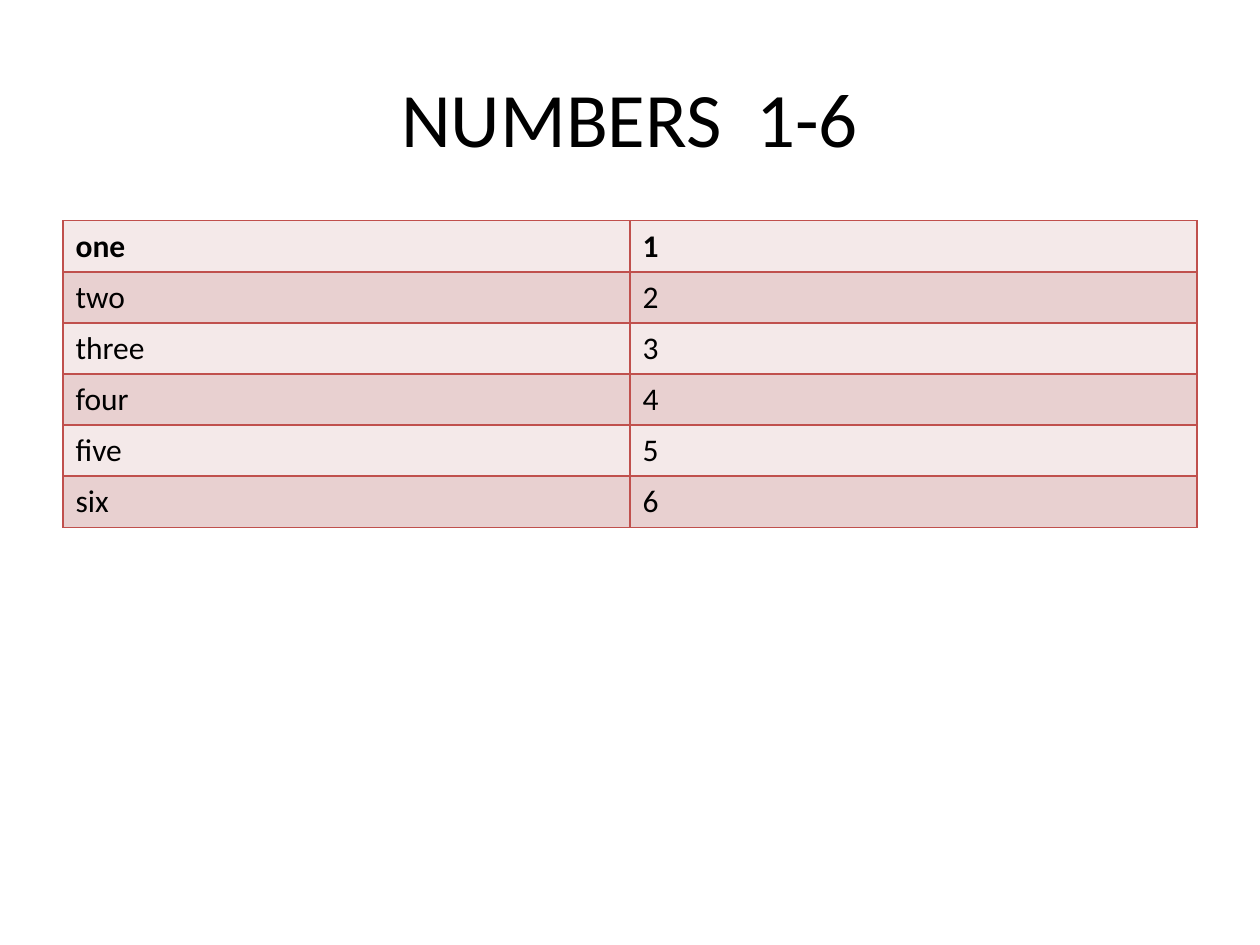
"""Build a slide with a table of the numbers one to six."""
from lxml.etree import SubElement
from pptx import Presentation
from pptx.dml.color import RGBColor
from pptx.enum.text import MSO_ANCHOR as Anchor, PP_ALIGN as Align
from pptx.oxml.ns import qn
from pptx.util import Cm, Pt

TITLE = "NUMBERS  1-6"
NUMBERS = ["one", "two", "three", "four", "five", "six"]
FONT = "Calibri"
TEXT_COLOR = "000000"
BORDER_COLOR = "C0504D"
BAND_COLORS = ["F4E9E9", "E8D0D0"]
LEFT, WIDTH = 1.27, 22.86
TITLE_TOP, TITLE_HEIGHT = 0.76, 3.18
TABLE_TOP, ROW_HEIGHT = 4.45, 1.03


def color(value):
    """Return the colour for a hex string."""
    return RGBColor.from_string(value)


def format_text(text_frame, size, bold=False):
    """Set the font of every run."""
    for paragraph in text_frame.paragraphs:
        for run in paragraph.runs:
            run.font.name = FONT
            run.font.size = Pt(size)
            run.font.bold = bold
            run.font.color.rgb = color(TEXT_COLOR)


def add_borders(cell):
    """Draw a thin line on all four sides of a cell."""
    properties = cell._tc.get_or_add_tcPr()
    for position, side in enumerate(["a:lnL", "a:lnR", "a:lnT", "a:lnB"]):
        line = SubElement(properties, qn(side), w=str(Pt(1)))
        fill = SubElement(line, qn("a:solidFill"))
        SubElement(fill, qn("a:srgbClr"), val=BORDER_COLOR)
        properties.insert(position, line)


def add_title(slide):
    """Add the centred title."""
    shape = slide.shapes.add_textbox(Cm(LEFT), Cm(TITLE_TOP), Cm(WIDTH), Cm(TITLE_HEIGHT))
    text_frame = shape.text_frame
    text_frame.word_wrap = True
    text_frame.vertical_anchor = Anchor.MIDDLE
    text_frame.text = TITLE
    text_frame.paragraphs[0].alignment = Align.CENTER
    format_text(text_frame, 44)


def add_number_table(slide):
    """Add the banded table of words and digits."""
    count = len(NUMBERS)
    table = slide.shapes.add_table(
        count, 2, Cm(LEFT), Cm(TABLE_TOP), Cm(WIDTH), Cm(ROW_HEIGHT * count)
    ).table
    for index, word in enumerate(NUMBERS):
        for cell, text in zip(table.rows[index].cells, [word, str(index + 1)]):
            cell.text_frame.text = text
            format_text(cell.text_frame, 18, bold=index == 0)
            cell.fill.solid()
            cell.fill.fore_color.rgb = color(BAND_COLORS[index % 2])
            add_borders(cell)


def main():
    """Create and save the presentation."""
    presentation = Presentation()
    presentation.slide_width, presentation.slide_height = Cm(25.4), Cm(19.05)
    slide = presentation.slides.add_slide(presentation.slide_layouts[6])
    add_title(slide)
    add_number_table(slide)
    presentation.save("out.pptx")


if __name__ == "__main__":
    main()
